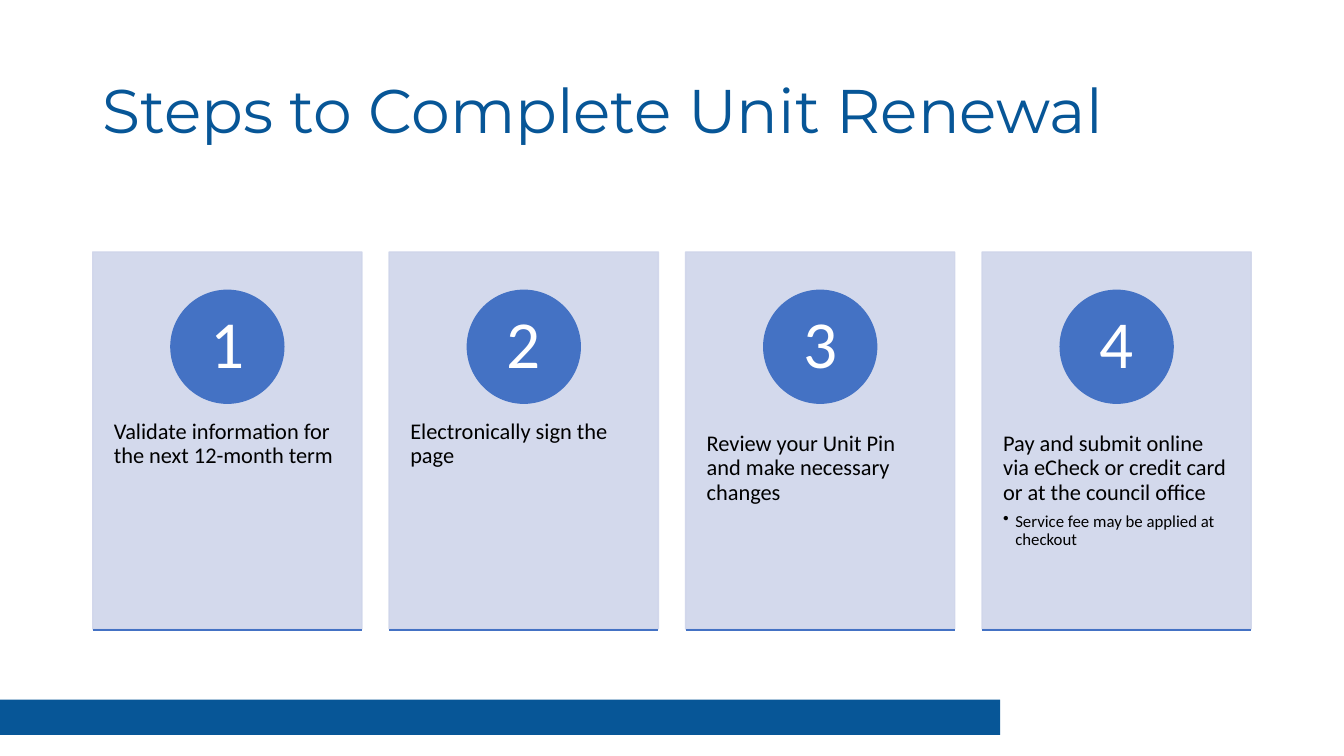
from lxml.etree import SubElement
from pptx import Presentation
from pptx.dml.color import RGBColor
from pptx.enum.shapes import MSO_CONNECTOR, MSO_SHAPE
from pptx.enum.text import MSO_ANCHOR, MSO_AUTO_SIZE, PP_ALIGN
from pptx.oxml.ns import qn
from pptx.util import Inches, Pt

NAVY, BLUE, PALE = "075697", "4472C4", "CFD5EA"
LEFT, PITCH, WIDE = 0.92, 2.94, 2.67  # card columns
TOP, TALL = 2.5, 3.74                 # card row
DISC = 1.12

steps = [
    ("Validate information for the next 12-month term", None),
    ("Electronically sign the page", None),
    ("Review your Unit Pin and make necessary changes", None),
    ("Pay and submit online via eCheck or credit card or at the council office",
     "Service fee may be applied at checkout"),
]

deck = Presentation()
deck.slide_width, deck.slide_height = Inches(13.33), Inches(7.5)
slide = deck.slides.add_slide(deck.slide_layouts[5])
shapes = slide.shapes


def paint(kind, box, color, line=True):
    shape = shapes.add_shape(kind, *map(Inches, box))
    shape.shadow.inherit = False
    shape.fill.solid()
    shape.fill.fore_color.rgb = RGBColor.from_string(color)
    if line:
        shape.line.color.rgb = RGBColor.from_string(color)
        shape.line.width = Pt(1)
    else:
        shape.line.fill.background()
    return shape


def style(para, text, size, color, font="Calibri", align=PP_ALIGN.LEFT):
    para.text = text
    para.alignment = align
    para.line_spacing = 0.9
    para.font.size = Pt(size)
    para.font.name = font
    para.font.color.rgb = RGBColor.from_string(color)


# Footer band
paint(MSO_SHAPE.RECTANGLE, (0, 6.94, 9.92, 0.35), NAVY, line=False)

# Title
title = shapes.title
title.left, title.top, title.width, title.height = map(Inches, (LEFT, 0.4, 11.5, 1.45))
frame = title.text_frame
frame.auto_size = MSO_AUTO_SIZE.NONE
frame.vertical_anchor = MSO_ANCHOR.MIDDLE
style(frame.paragraphs[0], "Steps to Complete Unit Renewal", 44, NAVY, "Montserrat")

# Step cards
for num, (text, note) in enumerate(steps):
    x = LEFT + num * PITCH

    # Slightly transparent panel
    card = paint(MSO_SHAPE.RECTANGLE, (x, TOP, WIDE, TALL), PALE)
    for tint in card.fill._xPr.iter(qn("a:srgbClr")):
        SubElement(tint, qn("a:alpha"), val="90000")

    # Step text
    box = shapes.add_textbox(*map(Inches, (x, 3.93, WIDE, 2.25)))
    frame = box.text_frame
    frame.word_wrap = True
    frame.margin_left = frame.margin_right = Inches(0.21)
    frame.margin_top = frame.margin_bottom = Inches(0.36)
    para = frame.paragraphs[0]
    style(para, text, 16, "000000")
    para.space_after = Pt(5.6)
    if note:
        para = frame.add_paragraph()
        para.level = 1
        props = para._p.get_or_add_pPr()
        props.set("marL", str(Inches(0.12)))
        props.set("indent", str(-Inches(0.12)))
        SubElement(props, qn("a:buChar"), char="•")
        style(para, note, 12, "000000")
        para.space_after = Pt(1.8)

    # Numbered disc, centred on the card
    disc = paint(MSO_SHAPE.OVAL, (x + (WIDE - DISC) / 2, 2.88, DISC, DISC), BLUE)
    frame = disc.text_frame
    frame.vertical_anchor = MSO_ANCHOR.MIDDLE
    frame.margin_top = frame.margin_bottom = Inches(0.01)
    style(frame.paragraphs[0], str(num + 1), 48, "FFFFFF", align=PP_ALIGN.CENTER)

    # Base line
    ends = (x, TOP + TALL + 0.01, x + WIDE, TOP + TALL + 0.01)
    rule = shapes.add_connector(MSO_CONNECTOR.STRAIGHT, *map(Inches, ends))
    rule.line.color.rgb = RGBColor.from_string(BLUE)
    rule.line.width = Pt(1)
    SubElement(rule._element.spPr, qn("a:effectLst"))

deck.save("out.pptx")
